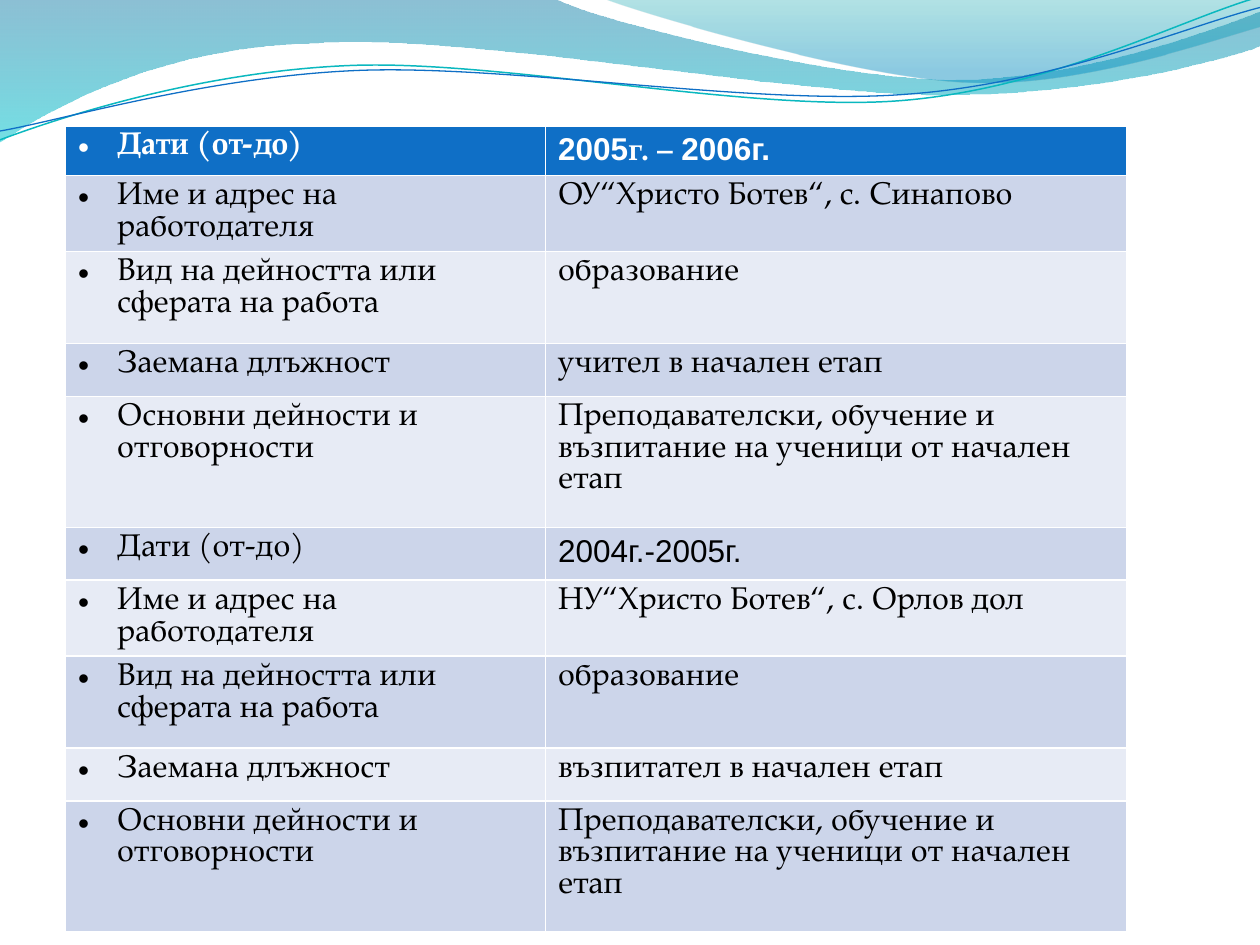
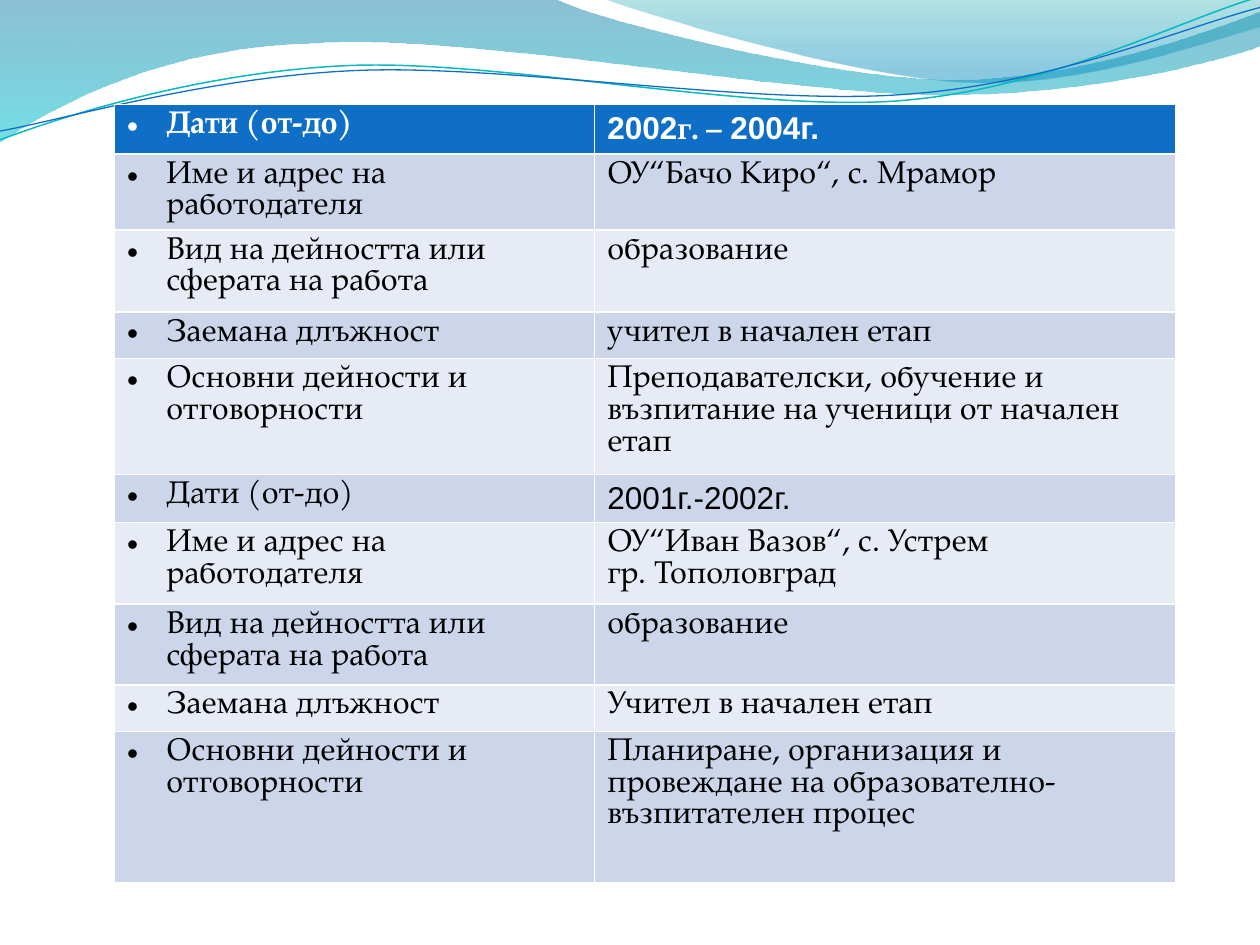
from dataclasses import dataclass
from math import cos, radians, sin

from lxml.etree import SubElement
from pptx import Presentation
from pptx.dml.color import RGBColor
from pptx.oxml.ns import qn
from pptx.util import Inches, Pt

LABELS = [
    "Дати (от-до)",
    "Име и адрес на работодателя",
    "Вид на дейността или сферата на работа",
    "Заемана длъжност",
    "Основни дейности и отговорности",
]
FIELD = "образование"
DUTIES = "Преподавателски, обучение и възпитание на ученици от начален етап"

# Each job answers the five labels; dates are runs that alternate two fonts.
SLIDES = [
    {
        "at": (0.52, 1.0),
        "rows": [0.39, 0.42, 0.73, 0.42, 1.04, 0.42, 0.42, 0.73, 0.42, 1.04],
        "jobs": [
            [("2005", "г. – ", "2006г."), "ОУ“Христо Ботев“, с. Синапово",
             FIELD, "учител в начален етап", DUTIES],
            [("2004г.-2005г.",), "НУ“Христо Ботев“, с. Орлов дол",
             FIELD, "възпитател в начален етап", DUTIES],
        ],
    },
    {
        "at": (0.91, 0.83),
        "rows": [0.37, 0.37, 0.65, 0.37, 0.92, 0.37, 0.65, 0.64, 0.37, 1.2],
        "jobs": [
            [("2002", "г. – ", "2004г."), "ОУ“Бачо Киро“, с. Мрамор",
             FIELD, "учител в начален етап", DUTIES],
            [("2001г.-2002г.",), "ОУ“Иван Вазов“, с. Устрем\nгр. Тополовград",
             FIELD, "Учител в начален етап",
             "Планиране, организация и провеждане на "
             "образователно-възпитателен процес"],
        ],
    },
]
COLS = (3.81, 4.61)

# A two-number step is a straight line, a six-number step a Bézier curve.
# A gradient stop is (position, colour, opacity), all shares in percent.
WAVES = [
    {"steps": [(0, 0), (4.4, -0.01), (4.76, 0.17, 6.64, 0.63, 7.58, 0.63),
               (8.53, 0.63, 9.58, 0.26, 10, 0.09), (10.01, 0.36),
               (9.83, 0.44, 8.7, 0.76, 7.46, 0.75),
               (6.22, 0.75, 3.82, 0.28, 2.57, 0.34),
               (1.29, 0.36, 0.46, 0.83, -0.01, 1.13), (0, 0)],
     "stops": [(0, "0074A1", 45), (100, "00C6CF", 55)]},
    {"steps": [(4.79, -0.01), (5.09, 0.11, 6.82, 0.62, 7.69, 0.65),
               (8.56, 0.69, 9.61, 0.32, 10, 0.21), (10, 0), (4.79, -0.01)],
     "stops": [(0, "00A1A9", 30), (80, "008BBF", 45)]},
    {"steps": [(0, 1.11), (0.48, 0.93, 1.58, 0.57, 2.77, 0.52),
               (3.95, 0.47, 5.93, 0.89, 7.13, 0.8),
               (8.33, 0.71, 9.38, 0.15, 9.98, -0.02)],
     "line": ("0AB8BF", 0.85), "mid": (4.99, 0.58), "tilt": -2.7},
    {"steps": [(0, 1.04), (0.47, 0.96, 1.64, 0.61, 2.83, 0.56),
               (4.03, 0.51, 5.97, 0.84, 7.17, 0.75),
               (8.36, 0.67, 9.41, 0.21, 10, 0.06)],
     "line": ("0F6FC6", 0.75), "mid": (5, 0.59), "tilt": -2.7},
]
WAVE_ID = 100


@dataclass(frozen=True)
class Theme:
    head: str = "0F6FC6"
    bands: tuple = ("E7EBF5", "CCD5EA")
    light: str = "FFFFFF"
    dark: str = "000000"
    text: str = "TeX Gyre Pagella"
    date: str = "Arial"
    size: float = 18
    hang: float = 0.31


THEME = Theme()


def rgb(code):
    return RGBColor.from_string(code)


def turn(point, mid, angle):
    """Rotate a point clockwise about the middle, in degrees."""
    dx, dy = point[0] - mid[0], point[1] - mid[1]
    c, s = cos(radians(angle)), sin(radians(angle))
    return mid[0] + dx * c - dy * s, mid[1] + dx * s + dy * c


def bend(shape, steps):
    """Join each three segments that stand for a curve into one Bézier."""
    segs = iter(list(shape.element.iter(qn("a:lnTo"))))
    for step in steps[1:]:
        first = next(segs)
        if len(step) == 6:
            first.tag = qn("a:cubicBezTo")
            for _ in range(2):
                seg = next(segs)
                first.append(seg[0])
                seg.getparent().remove(seg)


def shade(shape, stops):
    """Fill from top to bottom with see-through colours."""
    shape.fill.gradient()
    shape.fill.gradient_angle = 270
    for node, (pos, code, clear) in zip(shape.element.iter(qn("a:gs")), stops):
        node.clear()
        node.set("pos", str(pos * 1000))
        tint = SubElement(node, qn("a:srgbClr"), val=code)
        SubElement(tint, qn("a:alpha"), val=str(clear * 1000))


def add_wave(slide, master, num, steps, stops=None, line=None,
             mid=(0, 0), tilt=0):
    """Draw a wave and hand it to the master, so every slide shows it."""
    flat = [step[i:i + 2] for step in steps for i in range(0, len(step), 2)]
    pts = [tuple(map(Inches, turn(p, mid, -tilt))) for p in flat]
    pen = slide.shapes.build_freeform(*pts[0], scale=1.0)
    pen.add_line_segments(pts[1:], close=bool(stops))
    shape = pen.convert_to_shape()
    bend(shape, steps)
    shape.rotation = tilt
    shape.shadow.inherit = False
    if stops:
        shade(shape, stops)
        shape.line.fill.background()
    else:
        code, width = line
        shape.fill.background()
        shape.line.color.rgb = rgb(code)
        shape.line.width = Pt(width)
    next(shape.element.iter(qn("p:cNvPr"))).set("id", str(num))
    master.shapes.element.append(shape.element)


def put(frame, text, fonts=(THEME.text,), color=THEME.dark, bold=False,
        bullet=False):
    """Write text; a tuple gives runs, a line break a new paragraph."""
    paras = [text] if isinstance(text, tuple) else [
        (line,) for line in text.split("\n")]
    for i, runs in enumerate(paras):
        para = frame.add_paragraph() if i else frame.paragraphs[0]
        for j, words in enumerate(runs):
            run = para.add_run()
            run.text = words
            run.font.name = fonts[j % len(fonts)]
            run.font.size = Pt(THEME.size)
            run.font.bold = bold
            run.font.color.rgb = rgb(color)
        if bullet:
            props = para._p.get_or_add_pPr()
            props.set("marL", str(Inches(THEME.hang)))
            props.set("indent", str(-Inches(THEME.hang)))
            SubElement(props, qn("a:buFont"), typeface=THEME.date)
            SubElement(props, qn("a:buChar"), char="•")


def add_jobs(slide, at, rows, jobs):
    """Stack the jobs in one table; its default style draws the white rules."""
    pairs = [pair for job in jobs for pair in zip(LABELS, job)]
    left, top = map(Inches, at)
    table = slide.shapes.add_table(
        len(pairs), len(COLS), left, top,
        Inches(sum(COLS)), Inches(sum(rows))).table
    for col, width in zip(table.columns, COLS):
        col.width = Inches(width)
    for r, pair in enumerate(pairs):
        table.rows[r].height = Inches(rows[r])
        head = r == 0
        for c, text in enumerate(pair):
            cell = table.cell(r, c)
            cell.fill.solid()
            cell.fill.fore_color.rgb = rgb(
                THEME.head if head else THEME.bands[r % 2])
            dates = isinstance(text, tuple)
            put(cell.text_frame, text, bold=head, bullet=c == 0,
                color=THEME.light if head else THEME.dark,
                fonts=(THEME.date, THEME.text) if dates else (THEME.text,))


def main():
    prs = Presentation()
    prs.slide_width, prs.slide_height = Inches(10), Inches(7.5)
    blank = prs.slide_layouts[6]
    pages = [prs.slides.add_slide(blank) for _ in SLIDES]
    for num, wave in enumerate(WAVES, WAVE_ID):
        add_wave(pages[0], prs.slide_master, num, **wave)
    for page, data in zip(pages, SLIDES):
        add_jobs(page, **data)
    prs.save("out.pptx")


if __name__ == "__main__":
    main()
